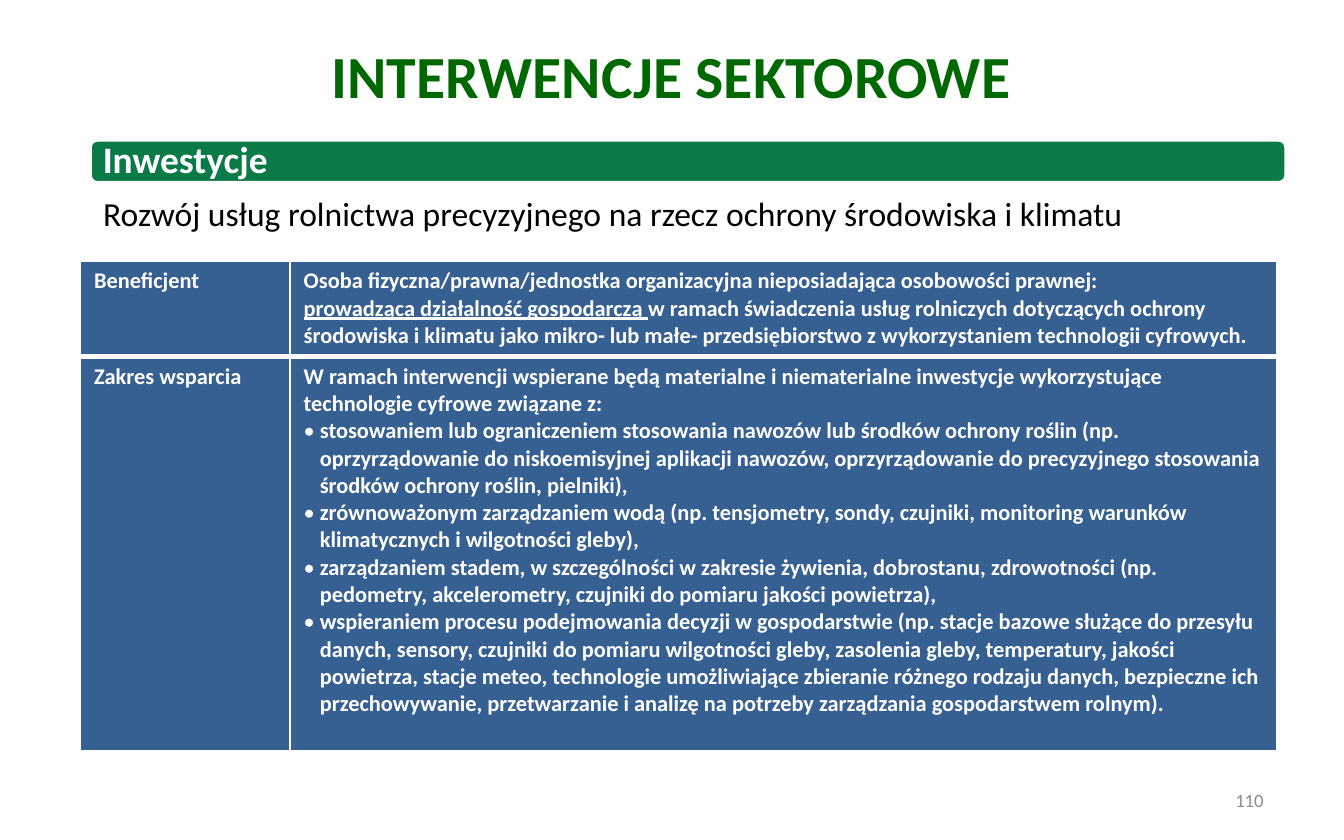
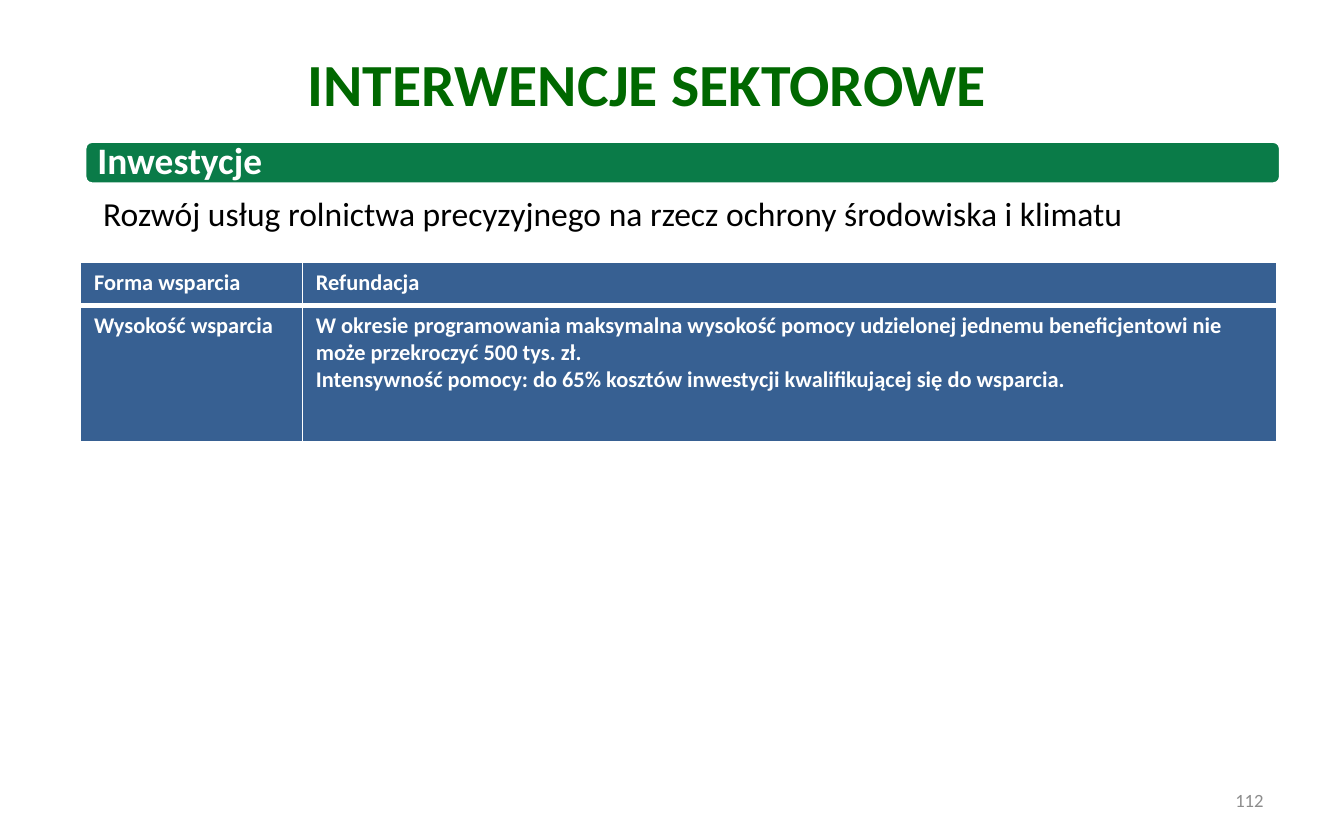
from dataclasses import dataclass

from lxml.etree import SubElement
from pptx import Presentation
from pptx.dml.color import RGBColor
from pptx.enum.shapes import MSO_SHAPE
from pptx.enum.text import MSO_ANCHOR, MSO_AUTO_SIZE, PP_ALIGN
from pptx.oxml.ns import qn
from pptx.util import Inches, Pt


@dataclass(frozen=True)
class Theme:
    font: str = "Calibri"
    title_green: str = "006800"
    band_green: str = "0A7B48"
    cell_blue: str = "376092"
    white: str = "FFFFFF"
    black: str = "000000"
    grey: str = "8C8C8C"
    title_size: int = 32
    band_size: int = 20
    subtitle_size: int = 18
    cell_size: int = 12
    number_size: int = 10
    thin_border: int = 1
    thick_border: int = 3


THEME = Theme()
TITLE = "INTERWENCJE SEKTOROWE"
SECTION = "Inwestycje"
SUBTITLE = "Rozwój usług rolnictwa precyzyjnego na rzecz ochrony środowiska i klimatu"
SUBTITLE_BOX = (0.67, 1.39, 8.83, 0.4)
NUMBER_BOX = (7.17, 5.79, 2.33, 0.33)


@dataclass(frozen=True)
class Line:
    """One paragraph of a cell, with an optional underlined beginning."""
    text: str
    underlined: str = ""
    bullet: bool = False


@dataclass(frozen=True)
class Page:
    number: str
    title_box: tuple
    band_box: tuple
    table_box: tuple
    label_width: float
    row_heights: tuple
    rows: tuple


PAGES = (
    Page(
        number="110",
        title_box=(2.06, 0.24, 5.87, 0.71),
        band_box=(0.67, 1.04, 8.9, 0.32),
        table_box=(0.6, 1.94, 8.9, 3.65),
        label_width=1.56,
        row_heights=(0.71, 2.94),
        rows=(
            ("Beneficjent", (
                Line("Osoba fizyczna/prawna/jednostka organizacyjna nieposiadająca "
                     "osobowości prawnej:"),
                Line("w ramach świadczenia usług rolniczych dotyczących ochrony środowiska "
                     "i klimatu jako mikro- lub małe- przedsiębiorstwo z wykorzystaniem "
                     "technologii cyfrowych.",
                     underlined="prowadząca działalność gospodarczą "),
            )),
            ("Zakres wsparcia", (
                Line("W ramach interwencji wspierane będą materialne i niematerialne "
                     "inwestycje wykorzystujące technologie cyfrowe związane z:"),
                Line("stosowaniem lub ograniczeniem stosowania nawozów lub środków ochrony "
                     "roślin (np. oprzyrządowanie do niskoemisyjnej aplikacji nawozów, "
                     "oprzyrządowanie do precyzyjnego stosowania środków ochrony roślin, "
                     "pielniki),", bullet=True),
                Line("zrównoważonym zarządzaniem wodą (np. tensjometry, sondy, czujniki, "
                     "monitoring warunków klimatycznych i wilgotności gleby),", bullet=True),
                Line("zarządzaniem stadem, w szczególności w zakresie żywienia, dobrostanu, "
                     "zdrowotności (np. pedometry, akcelerometry, czujniki do pomiaru "
                     "jakości powietrza),", bullet=True),
                Line("wspieraniem procesu podejmowania decyzji w gospodarstwie (np. stacje "
                     "bazowe służące do przesyłu danych, sensory, czujniki do pomiaru "
                     "wilgotności gleby, zasolenia gleby, temperatury, jakości powietrza, "
                     "stacje meteo, technologie umożliwiające zbieranie różnego rodzaju "
                     "danych, bezpieczne ich przechowywanie, przetwarzanie i analizę na "
                     "potrzeby zarządzania gospodarstwem rolnym).", bullet=True),
            )),
        ),
    ),
    Page(
        number="112",
        title_box=(1.88, 0.3, 5.87, 0.71),
        band_box=(0.63, 1.05, 8.9, 0.32),
        table_box=(0.6, 1.95, 8.9, 1.34),
        label_width=1.65,
        row_heights=(0.32, 1.02),
        rows=(
            ("Forma wsparcia", (Line("Refundacja"),)),
            ("Wysokość wsparcia", (
                Line("W okresie programowania maksymalna wysokość pomocy udzielonej jednemu "
                     "beneficjentowi nie może przekroczyć 500 tys. zł."),
                Line("Intensywność pomocy: do 65% kosztów inwestycji kwalifikującej się "
                     "do wsparcia."),
            )),
        ),
    ),
)


def inches(box):
    return [Inches(length) for length in box]


def style(paragraph, size, color, bold=False, align=PP_ALIGN.LEFT):
    paragraph.alignment = align
    font = paragraph.font
    font.name, font.size, font.bold = THEME.font, Pt(size), bold
    font.color.rgb = RGBColor.from_string(color)


def add_title(slide, box):
    title = slide.shapes.title
    title.left, title.top, title.width, title.height = inches(box)
    frame = title.text_frame
    frame.text = TITLE
    frame.vertical_anchor = MSO_ANCHOR.TOP
    frame.auto_size = MSO_AUTO_SIZE.NONE
    style(frame.paragraphs[0], THEME.title_size, THEME.title_green, True, PP_ALIGN.CENTER)


def add_band(slide, box):
    band = slide.shapes.add_shape(MSO_SHAPE.ROUNDED_RECTANGLE, *inches(box))
    band.shadow.inherit = False
    band.fill.solid()
    band.fill.fore_color.rgb = RGBColor.from_string(THEME.band_green)
    band.line.color.rgb = RGBColor.from_string(THEME.white)
    band.line.width = Pt(2)
    frame = band.text_frame
    frame.margin_left = frame.margin_right = Inches(0.08)
    frame.margin_top = frame.margin_bottom = 0
    frame.vertical_anchor = MSO_ANCHOR.MIDDLE
    frame.text = SECTION
    frame.paragraphs[0].line_spacing = 0.9
    style(frame.paragraphs[0], THEME.band_size, THEME.white, bold=True)


def add_text(slide, box, text, size, color, align=PP_ALIGN.LEFT, anchor=MSO_ANCHOR.TOP):
    frame = slide.shapes.add_textbox(*inches(box)).text_frame
    frame.word_wrap = True
    frame.vertical_anchor = anchor
    frame.text = text
    style(frame.paragraphs[0], size, color, align=align)


def add_bullet(paragraph, indent):
    properties = paragraph._p.get_or_add_pPr()
    properties.set("marL", str(indent))
    properties.set("indent", str(-indent))
    SubElement(properties, qn("a:buFont"), typeface=THEME.font)
    SubElement(properties, qn("a:buChar"), char="•")


def add_borders(cell, top, bottom):
    properties = cell._tc.get_or_add_tcPr()
    sides = {"L": THEME.thin_border, "R": THEME.thin_border, "T": top, "B": bottom}
    for side, width in sides.items():
        border = SubElement(properties, qn(f"a:ln{side}"), w=str(Pt(width)))
        fill = SubElement(border, qn("a:solidFill"))
        SubElement(fill, qn("a:srgbClr"), val=THEME.white)


def fill_cell(cell, lines):
    cell.fill.solid()
    cell.fill.fore_color.rgb = RGBColor.from_string(THEME.cell_blue)
    frame = cell.text_frame
    for index, line in enumerate(lines):
        paragraph = frame.add_paragraph() if index else frame.paragraphs[0]
        if line.bullet:
            add_bullet(paragraph, Inches(0.12))
        if line.underlined:
            opening = paragraph.add_run()
            opening.text = line.underlined
            opening.font.underline = True
        paragraph.add_run().text = line.text
        style(paragraph, THEME.cell_size, THEME.white, bold=True)


def add_support_table(slide, page):
    table = slide.shapes.add_table(len(page.rows), 2, *inches(page.table_box)).table
    table.first_row = table.horz_banding = False
    table.columns[0].width = Inches(page.label_width)
    table.columns[1].width = Inches(page.table_box[2] - page.label_width)
    last = len(page.rows) - 1
    for index, (label, details) in enumerate(page.rows):
        table.rows[index].height = Inches(page.row_heights[index])
        top = THEME.thick_border if index else THEME.thin_border
        bottom = THEME.thick_border if index < last else THEME.thin_border
        for column, lines in enumerate(((Line(label),), details)):
            cell = table.cell(index, column)
            add_borders(cell, top, bottom)
            fill_cell(cell, lines)


def add_page(presentation, page):
    slide = presentation.slides.add_slide(presentation.slide_layouts[5])
    add_title(slide, page.title_box)
    add_band(slide, page.band_box)
    add_text(slide, SUBTITLE_BOX, SUBTITLE, THEME.subtitle_size, THEME.black)
    add_support_table(slide, page)
    add_text(slide, NUMBER_BOX, page.number, THEME.number_size, THEME.grey,
             PP_ALIGN.RIGHT, MSO_ANCHOR.MIDDLE)


def main():
    presentation = Presentation()
    presentation.slide_width, presentation.slide_height = Inches(10), Inches(6.25)
    for page in PAGES:
        add_page(presentation, page)
    presentation.save("out.pptx")


if __name__ == "__main__":
    main()
